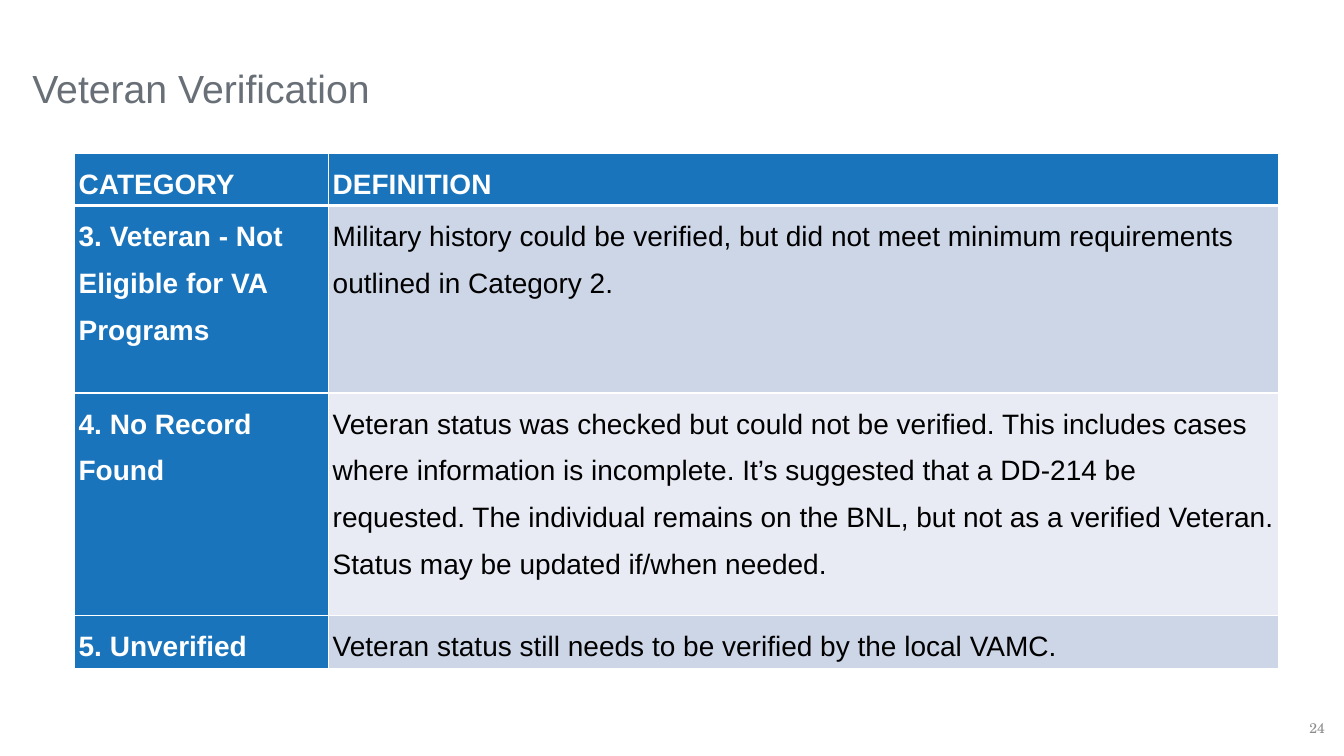
from lxml.etree import SubElement
from pptx import Presentation
from pptx.dml.color import RGBColor
from pptx.enum.text import MSO_ANCHOR as Anchor, MSO_AUTO_SIZE as AutoSize, PP_ALIGN as Align
from pptx.oxml.ns import qn
from pptx.util import Inches, Pt

WHITE = "FFFFFF"
BLUE = "1A74BB"
BANDS = ["CDD6E7", "E8EBF3"]
COLUMN_WIDTHS = [2.52, 9.42]
ROW_HEIGHTS = [0.52, 1.86, 2.21, 0.52]
ROWS = [
    ("CATEGORY", "DEFINITION"),
    ("3. Veteran - Not Eligible for VA Programs",
     "Military history could be verified, but did not meet minimum requirements "
     "outlined in Category 2."),
    ("4. No Record Found",
     "Veteran status was checked but could not be verified. This includes cases where "
     "information is incomplete. It’s suggested that a DD-214 be requested. The individual "
     "remains on the BNL, but not as a verified Veteran. Status may be updated if/when needed."),
    ("5. Unverified", "Veteran status still needs to be verified by the local VAMC."),
]


def color(value):
    return RGBColor.from_string(value)


def set_values(target, values):
    for name, value in values.items():
        setattr(target, name, value)


def write(frame, text, size, text_color, font="Arial", bold=False, **paragraph_format):
    frame.word_wrap = True
    paragraph = frame.paragraphs[0]
    paragraph.text = text
    set_values(paragraph, paragraph_format)
    run_font = paragraph.runs[0].font
    set_values(run_font, {"name": font, "size": Pt(size), "bold": bold})
    run_font.color.rgb = color(text_color)


def add_border(cell, side, width):
    line = SubElement(cell._tc.get_or_add_tcPr(), qn(f"a:ln{side}"), w=str(Pt(width)))
    fill = SubElement(line, qn("a:solidFill"))
    SubElement(fill, qn("a:srgbClr"), val=WHITE)


def format_cell(cell, text, row, column):
    heading = row == 0 or column == 0
    set_values(cell, {"margin_left": Inches(0.04), "margin_right": Inches(0.04),
                      "margin_top": 0, "margin_bottom": 0})
    widths = {"L": 1, "R": 1, "T": 3 if row == 1 else 1, "B": 3 if row == 0 else 1}
    for side, width in widths.items():
        add_border(cell, side, width)
    cell.fill.solid()
    cell.fill.fore_color.rgb = color(BLUE if heading else BANDS[(row - 1) % 2])
    write(cell.text_frame, text, 20, WHITE if heading else "000000",
          bold=heading, line_spacing=1.5)


def add_title(slide, text):
    title = slide.shapes.title
    set_values(title, {"left": Inches(0.22), "top": Inches(0.08),
                       "width": Inches(10.22), "height": Inches(1.08)})
    set_values(title.text_frame, {"vertical_anchor": Anchor.BOTTOM, "auto_size": AutoSize.NONE})
    write(title.text_frame, text, 28, "686F76", alignment=Align.LEFT)


def add_category_table(slide):
    table = slide.shapes.add_table(
        len(ROWS), len(COLUMN_WIDTHS), Inches(0.74), Inches(1.52),
        Inches(sum(COLUMN_WIDTHS)), Inches(sum(ROW_HEIGHTS))).table
    for column, width in zip(table.columns, COLUMN_WIDTHS):
        column.width = Inches(width)
    for row, height in zip(table.rows, ROW_HEIGHTS):
        row.height = Inches(height)
    for row, texts in enumerate(ROWS):
        for column, text in enumerate(texts):
            format_cell(table.cell(row, column), text, row, column)


def add_page_number(slide, number):
    box = slide.shapes.add_textbox(Inches(12.68), Inches(7.02), Inches(0.56), Inches(0.4))
    box.text_frame.vertical_anchor = Anchor.MIDDLE
    write(box.text_frame, number, 10, "8C8C8C", "TeX Gyre Schola", alignment=Align.RIGHT)


def main():
    presentation = Presentation()
    set_values(presentation, {"slide_width": Inches(13.33), "slide_height": Inches(7.5)})
    slide = presentation.slides.add_slide(presentation.slide_layouts[5])
    add_title(slide, "Veteran Verification")
    add_category_table(slide)
    add_page_number(slide, "24")
    presentation.save("out.pptx")


if __name__ == "__main__":
    main()
